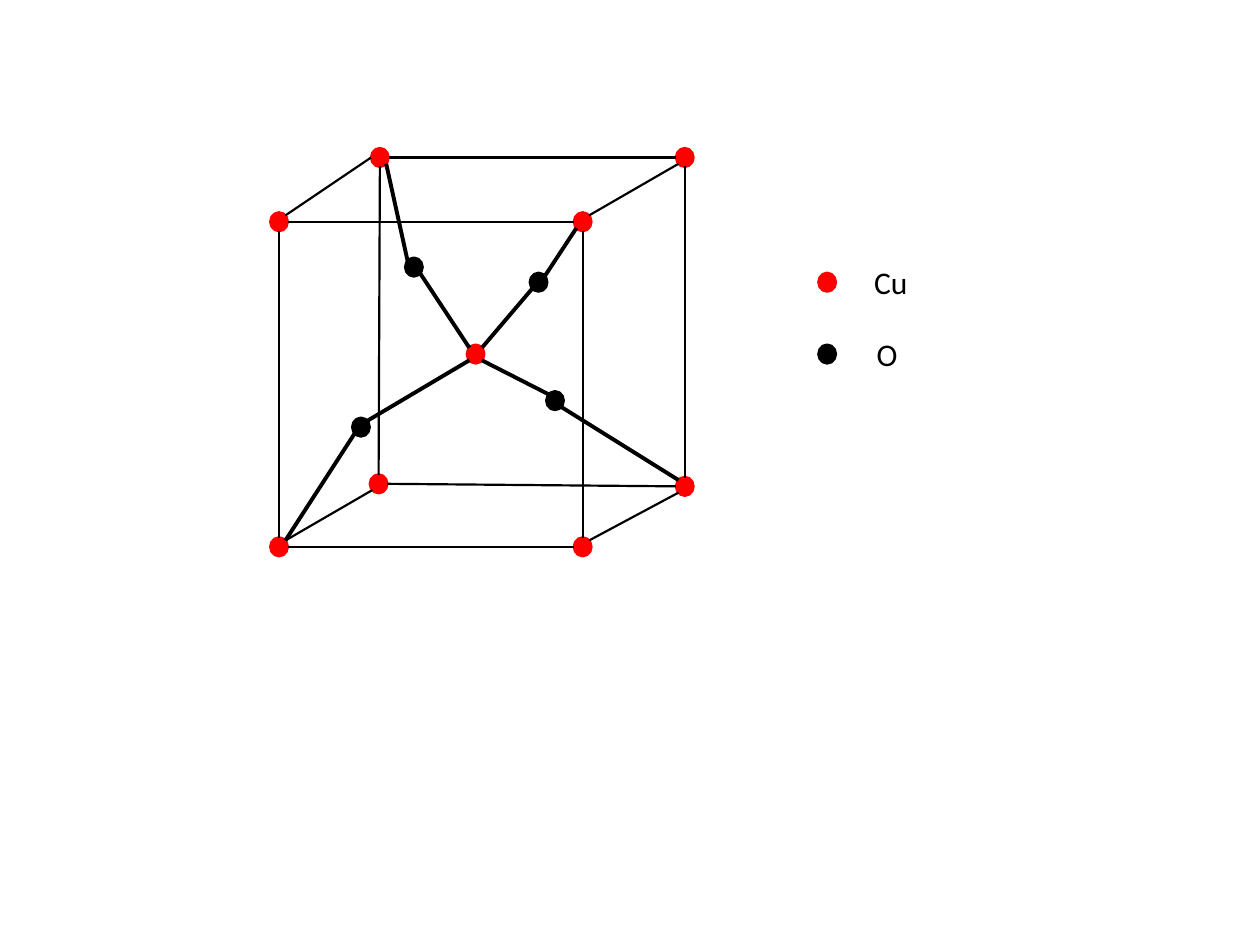
from dataclasses import dataclass

from lxml.etree import SubElement
from pptx import Presentation
from pptx.dml.color import RGBColor
from pptx.enum.shapes import MSO_CONNECTOR as Connector, MSO_SHAPE as Shape
from pptx.oxml.ns import qn
from pptx.slide import Slide
from pptx.util import Inches, Pt

RED = RGBColor(0xFF, 0x00, 0x00)
BLACK = RGBColor(0x00, 0x00, 0x00)
ATOM_WIDTH, ATOM_HEIGHT = 0.13, 0.14
EDGE_WEIGHT, BOND_WEIGHT = 1.25, 2.25
SIDE_X, SIDE_Y, DIAGONAL = 0.07, 0.07, 0.05
SITES = {
    "N": (0, -SIDE_Y), "S": (0, SIDE_Y), "W": (-SIDE_X, 0), "E": (SIDE_X, 0),
    "NW": (-DIAGONAL, -DIAGONAL), "NE": (DIAGONAL, -DIAGONAL),
    "SW": (-DIAGONAL, DIAGONAL), "SE": (DIAGONAL, DIAGONAL),
}


@dataclass(frozen=True)
class Atom:
    left: float
    top: float
    color: RGBColor = RED

    def site(self, name: str) -> tuple[float, float]:
        dx, dy = SITES[name]
        return self.left + ATOM_WIDTH / 2 + dx, self.top + ATOM_HEIGHT / 2 + dy


@dataclass(frozen=True)
class Link:
    start: Atom
    start_site: str
    end: Atom
    end_site: str


@dataclass(frozen=True)
class Label:
    text: str
    left: float
    top: float


CENTER = Atom(3.71, 2.74)
FRONT_TOP_LEFT, FRONT_TOP_RIGHT = Atom(2.15, 1.69), Atom(4.56, 1.69)
FRONT_LOW_LEFT, FRONT_LOW_RIGHT = Atom(2.15, 4.27), Atom(4.56, 4.27)
BACK_TOP_LEFT, BACK_TOP_RIGHT = Atom(2.95, 1.18), Atom(5.37, 1.18)
BACK_LOW_LEFT, BACK_LOW_RIGHT = Atom(2.94, 3.77), Atom(5.37, 3.79)
OXYGEN_TOP_LEFT, OXYGEN_TOP_RIGHT = Atom(3.22, 2.05, BLACK), Atom(4.21, 2.17, BLACK)
OXYGEN_LOW_LEFT, OXYGEN_LOW_RIGHT = Atom(2.8, 3.32, BLACK), Atom(4.34, 3.11, BLACK)

COPPER = [
    CENTER, FRONT_TOP_RIGHT, FRONT_TOP_LEFT, FRONT_LOW_RIGHT, FRONT_LOW_LEFT,
    BACK_TOP_LEFT, BACK_TOP_RIGHT, BACK_LOW_LEFT, BACK_LOW_RIGHT,
]
OXYGEN = [OXYGEN_TOP_RIGHT, OXYGEN_TOP_LEFT, OXYGEN_LOW_LEFT, OXYGEN_LOW_RIGHT]
EDGES = [
    Link(FRONT_TOP_LEFT, "NE", BACK_TOP_LEFT, "W"),
    Link(BACK_TOP_LEFT, "E", BACK_TOP_RIGHT, "W"),
    Link(BACK_TOP_LEFT, "S", BACK_LOW_LEFT, "N"),
    Link(BACK_TOP_RIGHT, "S", BACK_LOW_RIGHT, "N"),
    Link(BACK_LOW_LEFT, "E", BACK_LOW_RIGHT, "W"),
    Link(FRONT_TOP_LEFT, "E", FRONT_TOP_RIGHT, "W"),
    Link(FRONT_TOP_LEFT, "S", FRONT_LOW_LEFT, "N"),
    Link(FRONT_LOW_LEFT, "E", FRONT_LOW_RIGHT, "W"),
    Link(FRONT_LOW_RIGHT, "N", FRONT_TOP_RIGHT, "S"),
    Link(FRONT_LOW_LEFT, "NE", BACK_LOW_LEFT, "SW"),
    Link(FRONT_LOW_RIGHT, "NE", BACK_LOW_RIGHT, "SW"),
    Link(FRONT_TOP_RIGHT, "NE", BACK_TOP_RIGHT, "SW"),
]
BONDS = [
    Link(FRONT_LOW_LEFT, "NE", OXYGEN_LOW_LEFT, "SW"),
    Link(OXYGEN_LOW_LEFT, "NE", CENTER, "SW"),
    Link(BACK_TOP_LEFT, "SE", OXYGEN_TOP_LEFT, "NW"),
    Link(OXYGEN_TOP_LEFT, "SE", CENTER, "NW"),
    Link(FRONT_TOP_RIGHT, "SW", OXYGEN_TOP_RIGHT, "NE"),
    Link(OXYGEN_TOP_RIGHT, "SW", CENTER, "NE"),
    Link(CENTER, "SE", OXYGEN_LOW_RIGHT, "NW"),
    Link(OXYGEN_LOW_RIGHT, "SE", BACK_LOW_RIGHT, "NW"),
]
LEGEND = [Atom(6.5, 2.17), Atom(6.5, 2.74, BLACK)]
LABELS = [Label("Cu", 6.84, 2.04), Label("O", 6.86, 2.61)]


def draw_atom(shapes, atom: Atom) -> None:
    ball = shapes.add_shape(
        Shape.OVAL, Inches(atom.left), Inches(atom.top),
        Inches(ATOM_WIDTH), Inches(ATOM_HEIGHT),
    )
    ball.shadow.inherit = False
    ball.fill.solid()
    ball.fill.fore_color.rgb = atom.color
    ball.line.color.rgb = atom.color
    ball.line.width = Pt(2)


def draw_link(shapes, link: Link, weight: float) -> None:
    points = link.start.site(link.start_site) + link.end.site(link.end_site)
    line = shapes.add_connector(Connector.STRAIGHT, *map(Inches, points))
    line.line.color.rgb = BLACK
    line.line.width = Pt(weight)
    SubElement(line._element.spPr, qn("a:effectLst"))


def draw_label(page: Slide, label: Label) -> None:
    box = page.shapes.add_textbox(
        Inches(label.left), Inches(label.top), Inches(0.67), Inches(0.4)
    )
    box.text_frame.word_wrap = True
    para = box.text_frame.paragraphs[0]
    para.text = label.text
    para.font.name = "Calibri"
    para.font.size = Pt(18)
    para.font.color.rgb = BLACK


def main() -> None:
    """Draw the copper oxide unit cell with its legend."""
    deck = Presentation()
    deck.slide_width, deck.slide_height = Inches(10), Inches(7.5)
    page = deck.slides.add_slide(deck.slide_layouts[6])
    cell = page.shapes.add_group_shape().shapes
    for atom in COPPER:
        draw_atom(cell, atom)
    for edge in EDGES:
        draw_link(cell, edge, EDGE_WEIGHT)
    for atom in OXYGEN:
        draw_atom(cell, atom)
    for bond in BONDS:
        draw_link(cell, bond, BOND_WEIGHT)
    for atom in LEGEND:
        draw_atom(page.shapes, atom)
    for label in LABELS:
        draw_label(page, label)
    deck.save("out.pptx")


if __name__ == "__main__":
    main()
